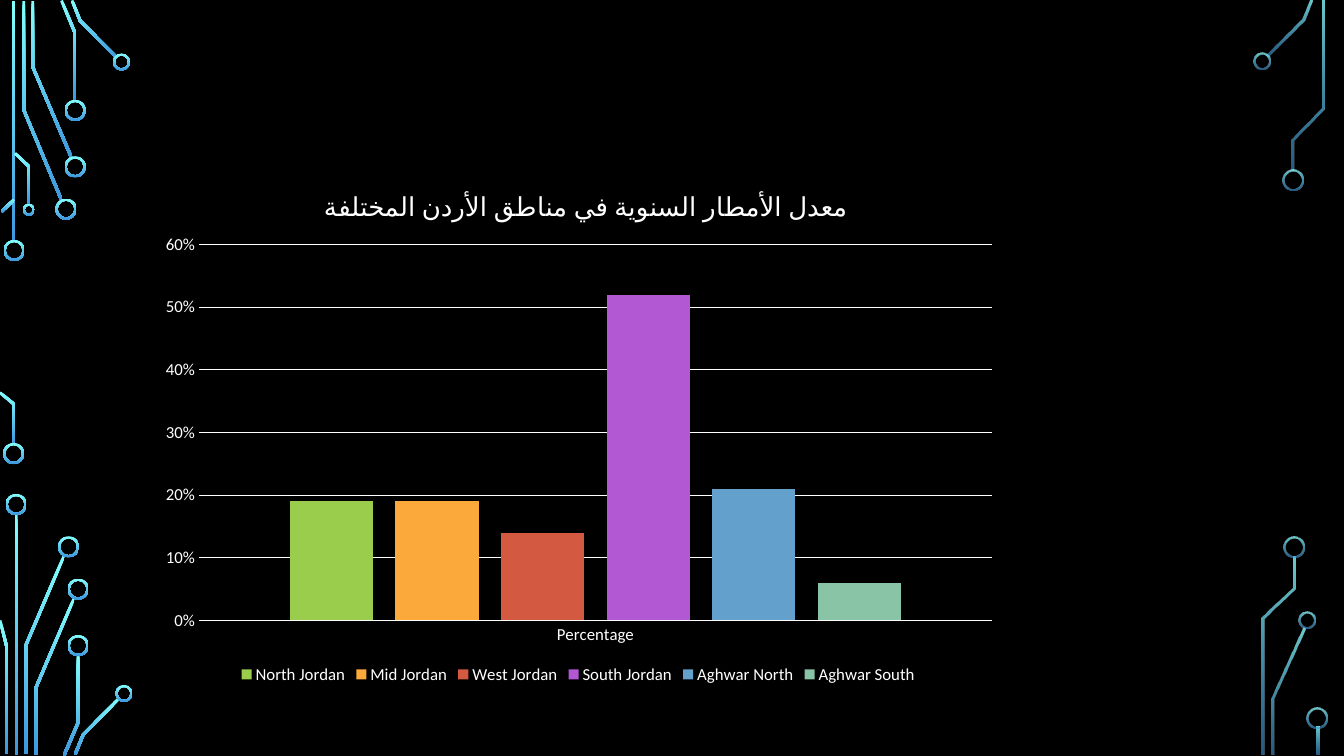
from math import hypot

from lxml.etree import SubElement
from pptx import Presentation
from pptx.chart.data import CategoryChartData
from pptx.dml.color import RGBColor
from pptx.enum.chart import XL_CHART_TYPE, XL_LEGEND_POSITION, XL_TICK_MARK
from pptx.enum.shapes import MSO_SHAPE
from pptx.oxml import parse_xml
from pptx.oxml.ns import nsdecls, qn
from pptx.util import Inches, Pt

CELL = Inches(0.1)  # the page is a grid of 133.33 columns by 75 rows
BLANK_LAYOUT = 6
TITLE = "معدل الأمطار السنوية في مناطق الأردن المختلفة"
RAINFALL = [
    ("North Jordan", 0.19, "9ACD4C"),
    ("Mid Jordan", 0.19, "FAA93A"),
    ("West Jordan", 0.14, "D35940"),
    ("South Jordan", 0.52, "B258D3"),
    ("Aghwar North", 0.21, "63A0CC"),
    ("Aghwar South", 0.06, "8AC4A7"),
]

# Circuit traces are centre lines (column, row); rings are (column, row, diameter).
LEFT_TRACES = [
    [(1.35, 0.1), (1.35, 24)],
    [(2.35, 0.1), (2.35, 10.9), (6.1, 19.85)],
    [(3.25, 0.1), (3.25, 6.65), (7.1, 15.65)],
    [(6.1, 0.05), (7.45, 3.3), (7.45, 10)],
    [(7.15, 0.05), (7.95, 2.05), (11.55, 5.7)],
    [(1.4, 19.8), (0.15, 21)],
    [(0, 38.95), (1.4, 40.1), (1.4, 44.1)],
    [(1.5, 15.2), (2.9, 16.55), (2.9, 20.3)],
    [(1.6, 51), (1.6, 74.9)],
    [(2.55, 74.8), (2.55, 64.05), (6.35, 55.15)],
    [(0, 61.55), (0.65, 64.1), (0.65, 74.8)],
    [(3.55, 74.9), (3.55, 68.25), (7.35, 59.35)],
    [(6.35, 74.95), (7.75, 71.7), (7.75, 65)],
    [(7.45, 74.85), (8.25, 72.9), (11.8, 69.3)],
]
LEFT_RINGS = [
    (1.4, 24.85, 2.1), (1.35, 45, 2.1), (6.55, 20.75, 2.1), (7.45, 16.55, 2.1),
    (7.45, 10.95, 2.1), (12.05, 6.15, 1.7), (2.85, 20.8, 1.2), (1.6, 50.05, 2.1),
    (6.8, 54.25, 2.1), (7.75, 58.45, 2.1), (7.75, 64.05, 2.1), (12.3, 68.8, 1.7),
]
RIGHT_TRACES = [
    [(125.7, 5.55), (129.25, 2), (130.05, 0.05)],
    [(126.25, 74.9), (126.25, 69.35), (129.3, 62.35)],
    [(128.2, 16.9), (128.2, 13.85), (131.25, 10.75), (131.25, 0.1)],
    [(125.25, 74.9), (125.25, 61.35), (128.35, 58.35), (128.35, 55.2)],
    [(130.75, 72.1), (130.75, 74.9)],
]
RIGHT_RINGS = [
    (125.15, 6.05, 1.7), (128.25, 17.85, 2.1), (129.65, 61.55, 1.7),
    (128.3, 54.25, 2.1), (130.65, 71.2, 2.1),
]


def color(value):
    return RGBColor.from_string(value)


def grid(cells):
    return round(cells * CELL)


def band_outline(points, width):
    """Return the corners of a band of the given width around a centre line."""
    normals = []
    for (x1, y1), (x2, y2) in zip(points, points[1:]):
        length = hypot(x2 - x1, y2 - y1)
        normals.append(((y1 - y2) / length, (x2 - x1) / length))
    before, after = normals[:1] + normals, normals + normals[-1:]
    near, far = [], []
    for (x, y), (ax, ay), (bx, by) in zip(points, before, after):
        reach = width / 2 / (1 + ax * bx + ay * by)
        dx, dy = (ax + bx) * reach, (ay + by) * reach
        near.append((x + dx, y + dy))
        far.append((x - dx, y - dy))
    return near + far[::-1]


def place(element, index, **shares):
    """Put a manual layout, in shares of the chart, at a child index."""
    old = element.find(qn("c:layout"))
    if old is not None:
        element.remove(old)
    target = '<c:layoutTarget val="inner"/>' if "w" in shares else ""
    modes = "".join(f'<c:{key}Mode val="edge"/>' for key in "xy")
    values = "".join(f'<c:{key} val="{share}"/>' for key, share in shares.items())
    element.insert(index, parse_xml(
        f'<c:layout {nsdecls("c")}><c:manualLayout>{target}{modes}{values}'
        "</c:manualLayout></c:layout>"))


class RainfallPage:
    font = "Calibri"
    ink = "FFFFFF"
    paper = "000000"
    glow = ("82FFFF", "3D97DE")
    stroke = 0.28

    def __init__(self, deck):
        self.page = deck.slides.add_slide(deck.slide_layouts[BLANK_LAYOUT])
        fill = self.page.background.fill
        fill.solid()
        fill.fore_color.rgb = color(self.paper)

    def paint(self, shape, opacities):
        """Fill with the downward glow, one opacity percentage per stop."""
        shape.shadow.inherit = False
        shape.line.fill.background()
        shape.fill.gradient()
        shape.fill.gradient_angle = 270
        stops = shape.fill.gradient_stops
        for position, (stop, tint, opacity) in enumerate(zip(stops, self.glow, opacities)):
            stop.position = position
            stop.color.rgb = color(tint)
            if opacity < 100:
                tint_element = stop._gs.find(qn("a:srgbClr"))
                SubElement(tint_element, qn("a:alpha"), val=str(opacity * 1000))

    def trace(self, points, opacities):
        corners = [(grid(x), grid(y)) for x, y in band_outline(points, self.stroke)]
        builder = self.page.shapes.build_freeform(*corners[0])
        builder.add_line_segments(corners[1:], close=True)
        self.paint(builder.convert_to_shape(), opacities)

    def ring(self, column, row, diameter, opacities):
        corner = [grid(center - diameter / 2) for center in (column, row)]
        shape = self.page.shapes.add_shape(
            MSO_SHAPE.DONUT, *corner, grid(diameter), grid(diameter))
        shape.adjustments[0] = 0.21 / diameter
        self.paint(shape, opacities)

    def circuit(self, traces, rings, opacities):
        for points in traces:
            self.trace(points, opacities)
        for column, row, diameter in rings:
            self.ring(column, row, diameter, opacities)

    def style_font(self, font, size):
        font.name = self.font
        font.size = Pt(size)
        font.bold = False
        font.color.rgb = color(self.ink)

    def style_line(self, line):
        line.color.rgb = color(self.ink)
        line.width = Pt(0.75)

    def chart(self, column, row, columns, rows):
        data = CategoryChartData(number_format="0%")
        data.categories = ["Percentage"]
        for region, share, _ in RAINFALL:
            data.add_series(region, [share])
        chart = self.page.shapes.add_chart(
            XL_CHART_TYPE.COLUMN_CLUSTERED,
            *map(grid, (column, row, columns, rows)), data).chart
        self.style_font(chart.font, 10)

        chart.has_title = True
        heading = chart.chart_title.text_frame
        heading.text = TITLE
        self.style_font(heading.paragraphs[0].runs[0].font, 18.6)
        place(chart.chart_title._element, 1, x=0.2, y=0.04)
        place(chart._chartSpace.chart.plotArea, 0, x=0.06, y=0.15, w=0.92, h=0.72)

        chart.has_legend = True
        chart.legend.position = XL_LEGEND_POSITION.BOTTOM
        chart.legend.include_in_layout = False
        self.style_font(chart.legend.font, 12)

        plot = chart.plots[0]
        plot.vary_by_categories = False
        plot.gap_width, plot.overlap = 219, -27
        for series, (_, _, tint) in zip(plot.series, RAINFALL):
            series.format.fill.solid()
            series.format.fill.fore_color.rgb = color(tint)

        for axis in (chart.category_axis, chart.value_axis):
            axis.major_tick_mark = axis.minor_tick_mark = XL_TICK_MARK.NONE
            self.style_font(axis.tick_labels.font, 12)
        self.style_line(chart.category_axis.format.line)
        scale = chart.value_axis
        scale.minimum_scale, scale.maximum_scale, scale.major_unit = 0, 0.6, 0.1
        scale.tick_labels.number_format = "0%"
        scale.tick_labels.number_format_is_linked = False
        scale.format.line.fill.background()
        self.style_line(scale.major_gridlines.format.line)


def main():
    deck = Presentation()
    deck.slide_width, deck.slide_height = Inches(13.33), Inches(7.5)
    page = RainfallPage(deck)
    page.circuit(LEFT_TRACES, LEFT_RINGS, (100, 100))
    page.circuit(RIGHT_TRACES, RIGHT_RINGS, (80, 60))
    page.chart(14.6, 16.5, 85.5, 51.8)
    deck.save("out.pptx")


if __name__ == "__main__":
    main()
